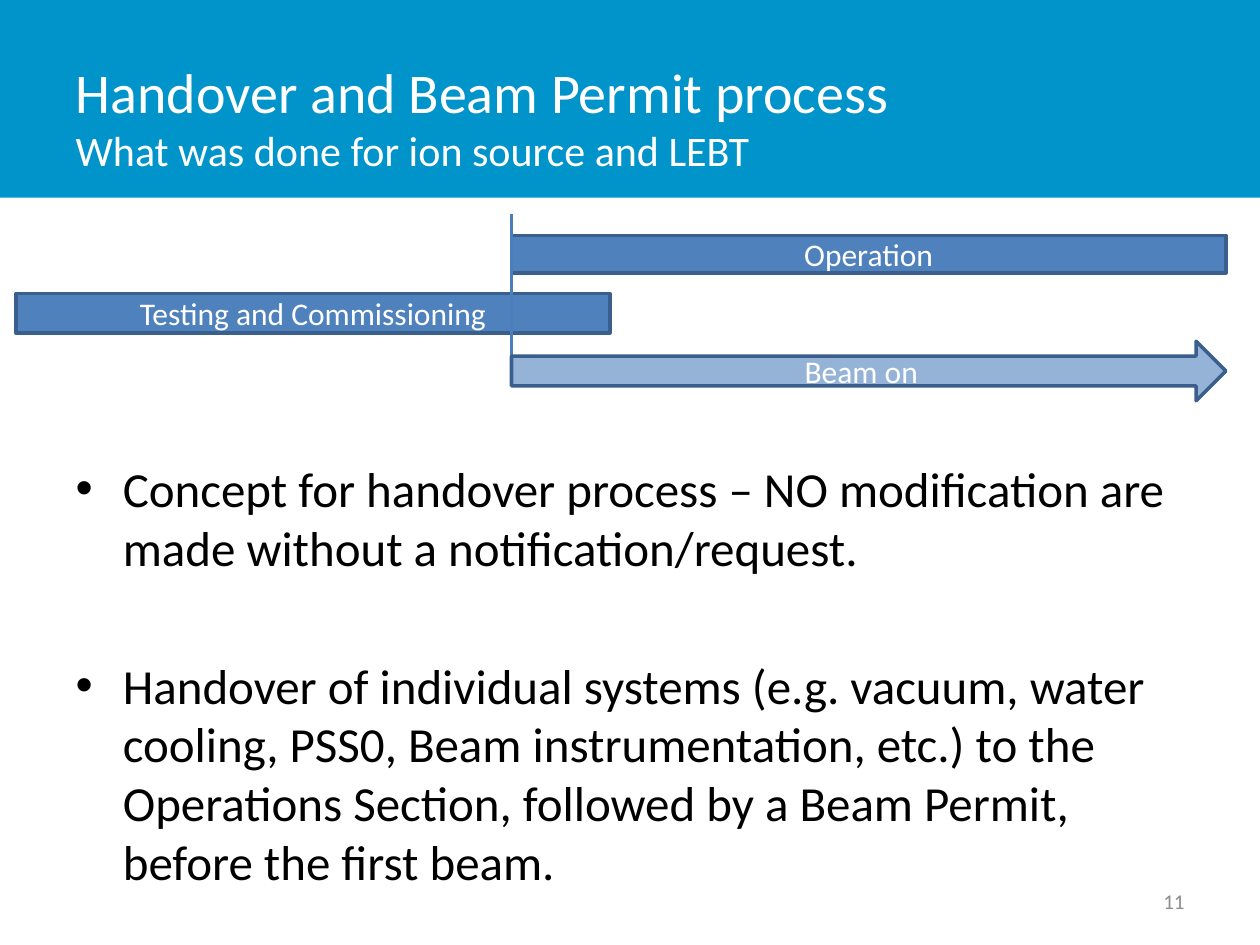
"""Build the handover and beam permit slide."""
from dataclasses import dataclass

from lxml import etree
from pptx import Presentation
from pptx.dml.color import RGBColor
from pptx.enum.shapes import MSO_CONNECTOR, MSO_SHAPE
from pptx.enum.text import MSO_ANCHOR, MSO_AUTO_SIZE, PP_ALIGN
from pptx.oxml.ns import qn
from pptx.util import Pt

RECT, ARROW = MSO_SHAPE.RECTANGLE, MSO_SHAPE.RIGHT_ARROW
STRAIGHT = MSO_CONNECTOR.STRAIGHT
TOP, MIDDLE = MSO_ANCHOR.TOP, MSO_ANCHOR.MIDDLE
LEFT, CENTER, RIGHT = PP_ALIGN.LEFT, PP_ALIGN.CENTER, PP_ALIGN.RIGHT
NO_FIT = MSO_AUTO_SIZE.NONE

COLORS = {
    "band": "0094CA", "bar": "4F81BD", "edge": "3A5F8C", "start": "4B7EBC",
    "white": "FFFFFF", "black": "000000", "number": "8C8C8C",
}
START_X, END_X = 292.3, 700.5
TITLE = [("Handover and Beam Permit process", 32),
         ("What was done for ion source and LEBT", 24)]
BULLETS = [
    "Concept for handover process – NO modification are made without a "
    "notification/request.",
    "Handover of individual systems (e.g. vacuum, water cooling, PSS0, Beam "
    "instrumentation, etc.) to the Operations Section, followed by a Beam "
    "Permit, before the first beam.",
]


@dataclass
class Phase:
    """A labelled bar on the timeline, in points."""
    label: str
    left: float
    top: float
    right: float
    height: float
    kind: int = RECT
    opacity: int = 100


PHASES = [
    Phase("Testing and Commissioning", 9.2, 167.8, 348.5, 22.5),
    Phase("Operation", START_X, 134.5, END_X, 21.5),
    Phase("Beam on", START_X, 195, END_X, 34, ARROW, 60),
]


def rgb(name: str) -> RGBColor:
    """Return a palette colour."""
    return RGBColor.from_string(COLORS[name])


def place(sp, left: float, top: float, width: float, height: float) -> None:
    """Move and size a shape in points."""
    box = {"left": left, "top": top, "width": width, "height": height}
    for name, value in box.items():
        setattr(sp, name, Pt(value))


def add_run(p, text: str, size: float, color: str) -> None:
    """Append a formatted run to a paragraph."""
    r = p.add_run()
    r.text = text
    for name, value in {"name": "Calibri", "size": Pt(size)}.items():
        setattr(r.font, name, value)
    r.font.color.rgb = rgb(color)


def format_frame(tf, anchor, align) -> None:
    """Set wrapping, anchor and first paragraph alignment."""
    formats = {"word_wrap": True, "auto_size": NO_FIT, "vertical_anchor": anchor}
    for name, value in formats.items():
        setattr(tf, name, value)
    tf.paragraphs[0].alignment = align


def add_band(s) -> None:
    """Draw the header band behind everything else."""
    sp = s.shapes.add_shape(RECT, 0, 0, Pt(720), Pt(113))
    sp.shadow.inherit = False
    sp.fill.solid()
    sp.fill.fore_color.rgb = rgb("band")
    sp.line.fill.background()
    s.shapes.element.insert(2, sp.element)


def add_title(s) -> None:
    """Fill the title placeholder."""
    sp = s.shapes.title
    place(sp, 36, 21.6, 562.3, 90)
    format_frame(sp.text_frame, MIDDLE, LEFT)
    p = sp.text_frame.paragraphs[0]
    for i, (text, size) in enumerate(TITLE):
        if i:
            p.add_line_break()
        add_run(p, text, size, "white")


def add_bullets(s) -> None:
    """Fill the body placeholder."""
    sp = s.placeholders[1]
    place(sp, 36, 258.5, 648, 242)
    tf = sp.text_frame
    format_frame(tf, TOP, LEFT)
    for i, text in enumerate(BULLETS):
        p = tf.add_paragraph() if i else tf.paragraphs[0]
        p.space_before = Pt(45 if i else 0)
        add_run(p, text, 28, "black")


def add_phase(s, phase: Phase) -> None:
    """Draw one timeline bar."""
    sp = s.shapes.add_shape(phase.kind, Pt(phase.left), Pt(phase.top),
                            Pt(phase.right - phase.left), Pt(phase.height))
    sp.shadow.inherit = False
    sp.fill.solid()
    sp.fill.fore_color.rgb = rgb("bar")
    if phase.opacity < 100:
        color = sp.element.spPr.find(qn("a:solidFill"))[0]
        etree.SubElement(color, qn("a:alpha"), val=str(phase.opacity * 1000))
    sp.line.color.rgb = rgb("edge")
    sp.line.width = Pt(2)
    format_frame(sp.text_frame, MIDDLE, CENTER)
    add_run(sp.text_frame.paragraphs[0], phase.label, 18, "white")


def add_start_line(s) -> None:
    """Draw the line marking the start of operation."""
    line = s.shapes.add_connector(STRAIGHT, Pt(START_X), Pt(122.4),
                                  Pt(START_X), Pt(207.4))
    line.line.color.rgb = rgb("start")
    line.line.width = Pt(1.75)
    etree.SubElement(line._element.spPr, qn("a:effectLst"))


def add_number(s) -> None:
    """Write the slide number."""
    sp = s.shapes.add_textbox(Pt(516), Pt(500.5), Pt(168), Pt(28.8))
    format_frame(sp.text_frame, MIDDLE, RIGHT)
    add_run(sp.text_frame.paragraphs[0], "11", 12, "number")


def main() -> None:
    """Build and save the slide."""
    prs = Presentation()
    prs.slide_width, prs.slide_height = Pt(720), Pt(540)
    s = prs.slides.add_slide(prs.slide_layouts[1])
    add_band(s)
    add_title(s)
    add_bullets(s)
    add_number(s)
    *bars, beam = PHASES
    for bar in bars:
        add_phase(s, bar)
    add_start_line(s)
    add_phase(s, beam)
    prs.save("out.pptx")


if __name__ == "__main__":
    main()
